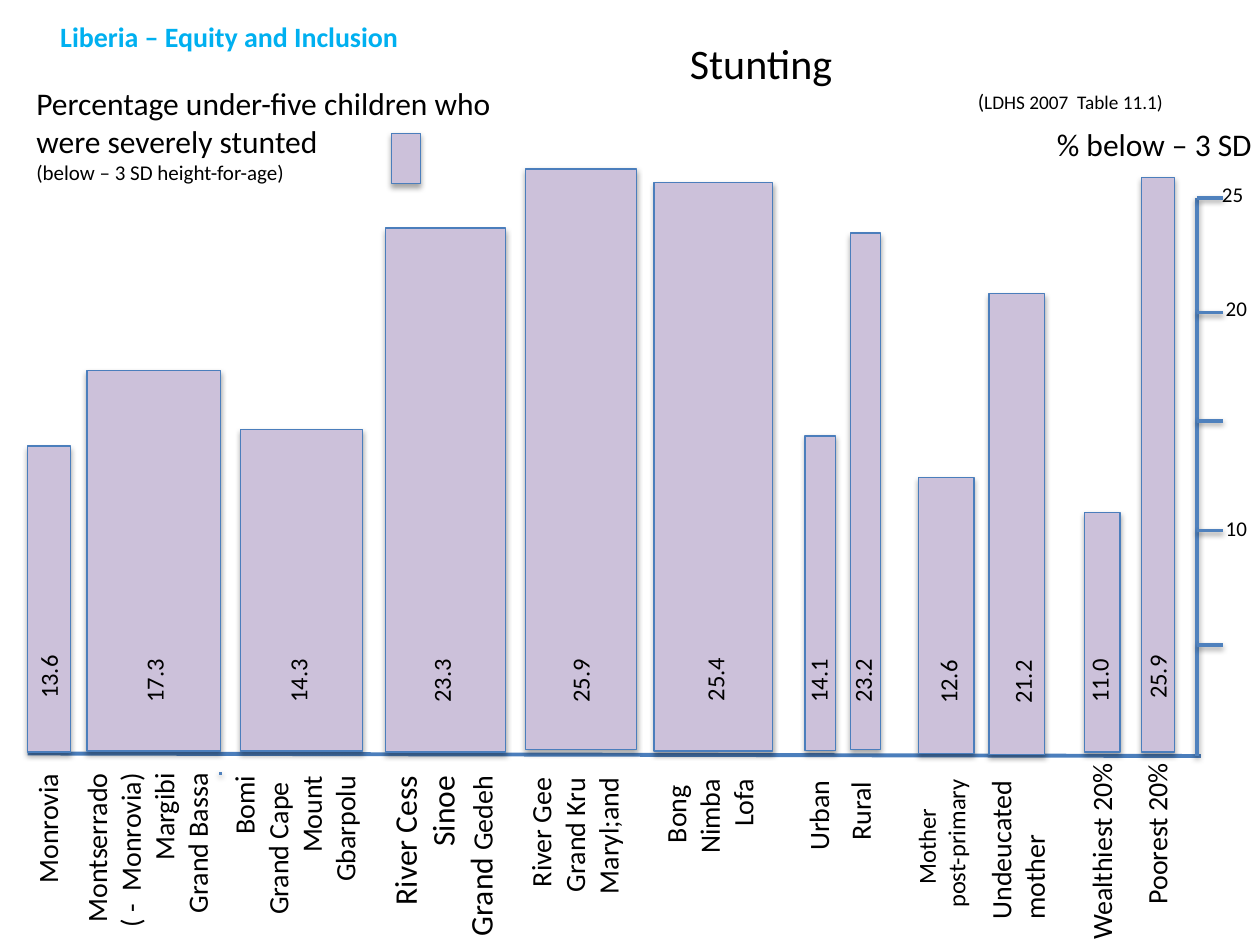
import pptx
import pptx.util
import pptx.dml.color
import pptx.enum.shapes
import pptx.enum.text
import pptx.oxml.ns
from lxml import etree

Inches = pptx.util.Inches
Pt = pptx.util.Pt
RGBColor = pptx.dml.color.RGBColor
LEFT = pptx.enum.text.PP_ALIGN.LEFT
CENTER = pptx.enum.text.PP_ALIGN.CENTER
RIGHT = pptx.enum.text.PP_ALIGN.RIGHT

BLACK = RGBColor(0x00, 0x00, 0x00)
HEADER_BLUE = RGBColor(0x00, 0xB0, 0xF0)
BAR_FILL = RGBColor(0xCC, 0xC1, 0xDA)
BAR_LINE = RGBColor(0x4B, 0x7E, 0xBC)
AXIS_BLUE = RGBColor(0x4F, 0x81, 0xBD)

presentation = pptx.Presentation()
presentation.slide_width = Inches(10)
presentation.slide_height = Inches(7.5)
slide = presentation.slides.add_slide(presentation.slide_layouts[6])


def add_text(paragraphs, left, top, width, height, size=16, align=LEFT,
             color=BLACK, bold=False, rotation=0, wrap=False):
    box = slide.shapes.add_textbox(Inches(left), Inches(top), Inches(width), Inches(height))
    box.rotation = rotation
    frame = box.text_frame
    frame.word_wrap = wrap
    frame.auto_size = pptx.enum.text.MSO_AUTO_SIZE.SHAPE_TO_FIT_TEXT
    for index, runs in enumerate(paragraphs):
        paragraph = frame.paragraphs[0] if index == 0 else frame.add_paragraph()
        paragraph.alignment = align
        for text, run_size in [(runs, size)] if isinstance(runs, str) else runs:
            run = paragraph.add_run()
            run.text = text
            run.font.name = "Calibri"
            run.font.size = Pt(run_size)
            run.font.bold = bold
            run.font.color.rgb = color
    return box


def set_effects(shape, distance=0, opacity=0):
    properties = shape._element.spPr
    effects = etree.SubElement(properties, pptx.oxml.ns.qn("a:effectLst"))
    if distance:
        shadow = etree.SubElement(
            effects, pptx.oxml.ns.qn("a:outerShdw"), blurRad=str(Pt(3.1)),
            dist=str(Pt(distance)), dir="5400000", rotWithShape="0")
        color = etree.SubElement(shadow, pptx.oxml.ns.qn("a:srgbClr"), val="000000")
        etree.SubElement(color, pptx.oxml.ns.qn("a:alpha"), val=str(opacity * 1000))


add_text(["Liberia – Equity and Inclusion"], 0.38, 0.11, 3.1, 0.37,
         color=HEADER_BLUE, bold=True, wrap=True)
title = add_text(["Stunting", [("(", 12), ("LDHS 2007  Table 11.1)", 11)]],
                 2.75, 0.25, 6.58, 0.71, size=24, align=CENTER, wrap=True)
title.text_frame.paragraphs[1].alignment = RIGHT
add_text(["Percentage under-five children who were severely stunted",
          [("(below – 3 SD height-for-age)", 12)]],
         0.19, 0.62, 4.32, 0.91, size=18, wrap=True)
add_text(["% below – 3 SD"], 8.29, 0.94, 1.76, 0.4, size=18)

axis_lines = [
    (0.22, 5.98, 9.53, 6, BAR_LINE, 2.25),
    (1.75, 6.15, 1.75, 6.13, AXIS_BLUE, 2),
    (9.5, 6, 9.5, 1.57, AXIS_BLUE, 2),
]
for tick_top in (5.12, 4.21, 3.34, 2.48, 1.57):
    axis_lines.append((9.5, tick_top, 9.71, tick_top, AXIS_BLUE, 2))
for start_x, start_y, end_x, end_y, color, width in axis_lines:
    line = slide.shapes.add_connector(
        pptx.enum.shapes.MSO_CONNECTOR.STRAIGHT,
        Inches(start_x), Inches(start_y), Inches(end_x), Inches(end_y))
    line.line.color.rgb = color
    line.line.width = Pt(width)
    if color == AXIS_BLUE:
        set_effects(line, 1.6, 38)
    else:
        set_effects(line)

for text, left, top in (("25", 9.6, 1.39), ("20", 9.63, 2.3), ("10", 9.63, 4.04)):
    add_text([text], left, top, 0.37, 0.3, size=12)

bars = [
    (0.22, 3.54, 0.34, 2.43, "13.6", 0.11, 5.2),
    (0.69, 2.94, 1.06, 3.02, "17.3", 0.95, 5.23),
    (1.91, 3.41, 0.97, 2.55, "14.3", 2.09, 5.23),
    (3.06, 1.81, 0.95, 4.16, "23.3", 3.23, 5.23),
    (4.17, 1.34, 0.88, 4.61, "25.9", 4.33, 5.23),
    (5.19, 1.45, 0.94, 4.51, "25.4", 5.4, 5.22),
    (6.39, 3.46, 0.24, 2.5, "14.1", 6.22, 5.23),
    (6.75, 1.85, 0.24, 4.1, "23.2", 6.57, 5.23),
    (7.29, 3.79, 0.44, 2.19, "12.6", 7.25, 5.24),
    (7.85, 2.33, 0.44, 3.66, "21.2", 7.84, 5.24),
    (8.61, 4.07, 0.28, 1.9, "11.0", 8.45, 5.23),
    (9.06, 1.41, 0.26, 4.56, "25.9", 8.91, 5.2),
    (3.11, 1.06, 0.23, 0.4, None, 0, 0),
]
for left, top, width, height, value, value_left, value_top in bars:
    bar = slide.shapes.add_shape(
        pptx.enum.shapes.MSO_SHAPE.RECTANGLE,
        Inches(left), Inches(top), Inches(width), Inches(height))
    bar.fill.solid()
    bar.fill.fore_color.rgb = BAR_FILL
    bar.line.color.rgb = BAR_LINE
    bar.line.width = Pt(0.75)
    set_effects(bar, 1.8, 35)
    if value:
        add_text([value], value_left, value_top, 0.55, 0.34, size=14, rotation=270)

categories = [
    (["Monrovia"], -0.25, 6.3, 1.25, 0.37, 16, LEFT, True),
    (["Montserrado", "( -  Monrovia)", "Margibi", "Grand Bassa"],
     0.45, 6.17, 1.44, 1.18, 16, RIGHT, False),
    (["Bomi", " Grand Cape ", "Mount", "Gbarpolu"], 1.59, 6.22, 1.5, 1.18, 16, RIGHT, True),
    (["River Cess", "Sinoe", [("Grand ", 18), ("Gedeh", 16)]],
     2.58, 6.49, 1.87, 1.01, 18, RIGHT, True),
    (["River Gee", "Grand Kru", "Maryl;and"], 3.99, 6.19, 1.14, 0.91, 16, RIGHT, False),
    (["Bong ", "Nimba ", "Lofa"], 5.23, 6.03, 0.8, 0.91, 16, RIGHT, False),
    (["Urban"], 6.11, 6.28, 0.77, 0.37, 16, LEFT, False),
    (["Rural"], 6.49, 6.25, 0.67, 0.37, 16, LEFT, False),
    (["Mother ", "post-primary"], 6.84, 6.41, 1.26, 0.57, 14, CENTER, True),
    (["Undeucated", "mother"], 7.42, 6.42, 1.31, 0.64, 16, LEFT, False),
    (["Wealthiest 20%"], 7.93, 6.56, 1.62, 0.37, 16, LEFT, False),
    (["Poorest 20%"], 8.51, 6.42, 1.34, 0.37, 16, LEFT, False),
]
for names, left, top, width, height, size, align, wrap in categories:
    add_text(names, left, top, width, height, size=size, align=align, rotation=270, wrap=wrap)

presentation.save("out.pptx")
